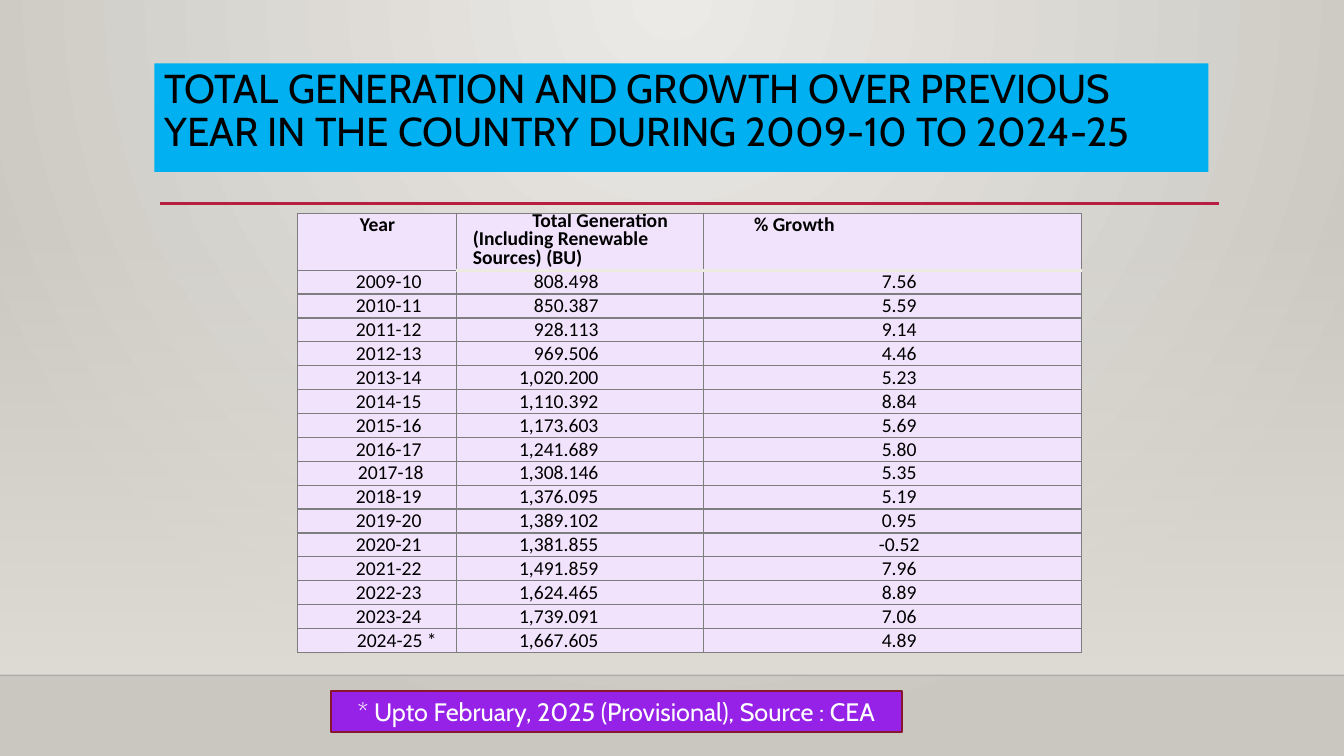
from lxml import etree
from pptx import Presentation
from pptx.dml.color import RGBColor
from pptx.enum import shapes, text
from pptx.oxml import ns
from pptx.util import Pt

TITLE = ("TOTAL GENERATION AND GROWTH OVER PREVIOUS YEAR "
         "IN THE COUNTRY DURING 2009-10 TO 2024-25")
NOTE = "* Upto February, 2025 (Provisional), Source : CEA"
HEADER = ("Year", "Total Generation (Including Renewable Sources) (BU)", "% Growth")
ROWS = [
    ("2009-10", "808.498", "7.56"),
    ("2010-11", "850.387", "5.59"),
    ("2011-12", "928.113", "9.14"),
    ("2012-13", "969.506", "4.46"),
    ("2013-14", "1,020.200", "5.23"),
    ("2014-15", "1,110.392", "8.84"),
    ("2015-16", "1,173.603", "5.69"),
    ("2016-17", "1,241.689", "5.80"),
    ("2017-18", "1,308.146", "5.35"),
    ("2018-19", "1,376.095", "5.19"),
    ("2019-20", "1,389.102", "0.95"),
    ("2020-21", "1,381.855", "-0.52"),
    ("2021-22", "1,491.859", "7.96"),
    ("2022-23", "1,624.465", "8.89"),
    ("2023-24", "1,739.091", "7.06"),
    ("2024-25 *", "1,667.605", "4.89"),
]

BLACK = RGBColor(0x00, 0x00, 0x00)
WHITE = RGBColor(0xFF, 0xFF, 0xFF)
SKY = RGBColor(0x00, 0xB0, 0xF0)
CRIMSON = RGBColor(0xB7, 0x1E, 0x42)
MAROON = RGBColor(0x87, 0x16, 0x31)
PURPLE = RGBColor(0x96, 0x22, 0xE7)
LILAC = RGBColor(0xF2, 0xE3, 0xFC)
GREY = RGBColor(0x7E, 0x7E, 0x7E)
CREAM = RGBColor(0xED, 0xEB, 0xE0)
PALE = RGBColor(0xEC, 0xEA, 0xE7)
STONE = RGBColor(0xCA, 0xC7, 0xC1)
SAND = RGBColor(0xDF, 0xDB, 0xD5)

WIDTH, HEIGHT = 960, 540
FLOOR = 482.4
TABLE_LEFT, TABLE_TOP = 212.4, 152.4
COLUMN_WIDTHS = (113.8, 176.4, 270)
HEADER_HEIGHT, ROW_HEIGHT = 40.6, 17.05

LEFT, CENTER, RIGHT = (text.PP_ALIGN.LEFT, text.PP_ALIGN.CENTER, text.PP_ALIGN.RIGHT)
# alignment, then left margin, right margin and first-line indent
HEADER_LAYOUT = ((CENTER, 0.7, 0, 0), (LEFT, 11.5, 0, 42.5), (LEFT, 36, 0, 0))
BODY_LAYOUT = ((LEFT, 41.8, 0, 0), (RIGHT, 0, 75, 0), (CENTER, 9.4, 0, 0))
WIDER_YEAR_INDENT = {"2017-18": 43.2, "2024-25 *": 42.5}


def set_values(target, values):
    for name, value in values.items():
        setattr(target, name, value)


def add_alpha(fill_parent, percent):
    """Make the first colour found inside the element see-through."""
    color = next(fill_parent.iter(ns.qn("a:srgbClr")))
    etree.SubElement(color, ns.qn("a:alpha"), val=str(percent * 1000))


def set_gradient(fill, first, last):
    fill.gradient()
    for stop, color, position in zip(fill.gradient_stops, (first, last), (0, 1)):
        stop.color.rgb = color
        stop.position = position


def add_background(slide):
    set_gradient(slide.background.fill, PALE, STONE)
    gradient = next(slide.element.iter(ns.qn("a:gradFill")))
    gradient.remove(gradient.find(ns.qn("a:lin")))
    circle = etree.SubElement(gradient, ns.qn("a:path"), path="circle")
    etree.SubElement(circle, ns.qn("a:fillToRect"),
                     l="43000", t="0", r="43000", b="100000")


def add_box(slide, left, top, width, height):
    shape = slide.shapes.add_shape(shapes.MSO_SHAPE.RECTANGLE,
                                   Pt(left), Pt(top), Pt(width), Pt(height))
    shape.shadow.inherit = False
    shape.line.fill.background()
    return shape


def add_rule(slide, left, right, y, color, weight):
    line = slide.shapes.add_connector(shapes.MSO_CONNECTOR.STRAIGHT,
                                      Pt(left), Pt(y), Pt(right), Pt(y))
    line.line.color.rgb = color
    line.line.width = Pt(weight)
    etree.SubElement(line.element.spPr, ns.qn("a:effectLst"))
    return line


def write(frame, words, font_name, size, color, alignment, bold=False):
    frame.word_wrap = True
    paragraph = frame.paragraphs[0]
    paragraph.alignment = alignment
    run = paragraph.add_run()
    run.text = words
    set_values(run.font, {"name": font_name, "size": Pt(size), "bold": bold})
    run.font.color.rgb = color
    return paragraph


def set_borders(cell, cream_sides):
    properties = cell._tc.get_or_add_tcPr()
    for position, side in enumerate("LRTB"):
        color, weight = (CREAM, 2.25) if side in cream_sides else (GREY, 1)
        border = etree.Element(ns.qn(f"a:ln{side}"), w=str(Pt(weight)))
        fill = etree.SubElement(border, ns.qn("a:solidFill"))
        etree.SubElement(fill, ns.qn("a:srgbClr"), val=str(color))
        properties.insert(position, border)


def fill_cell(cell, words, layout, is_header, cream_sides):
    alignment, left, right, indent = layout
    set_values(cell, dict.fromkeys(
        ("margin_left", "margin_right", "margin_top", "margin_bottom"), 0))
    cell.fill.solid()
    cell.fill.fore_color.rgb = LILAC
    set_borders(cell, cream_sides)
    paragraph = write(cell.text_frame, words, "Calibri", 14, BLACK, alignment, is_header)
    properties = paragraph._p.get_or_add_pPr()
    for name, value in {"marL": left, "marR": right, "indent": indent}.items():
        properties.set(name, str(Pt(value)))
    return paragraph


def add_generation_table(slide):
    table = slide.shapes.add_table(
        len(ROWS) + 1, len(HEADER), Pt(TABLE_LEFT), Pt(TABLE_TOP),
        Pt(sum(COLUMN_WIDTHS)), Pt(HEADER_HEIGHT + ROW_HEIGHT * len(ROWS))).table
    table.horz_banding = False
    for column, width in zip(table.columns, COLUMN_WIDTHS):
        column.width = Pt(width)
    for r, values in enumerate([HEADER] + ROWS):
        is_header = r == 0
        table.rows[r].height = Pt(HEADER_HEIGHT if is_header else ROW_HEIGHT)
        for c, words in enumerate(values):
            layout = (HEADER_LAYOUT if is_header else BODY_LAYOUT)[c]
            if words in WIDER_YEAR_INDENT:
                layout = (LEFT, WIDER_YEAR_INDENT[words], 0, 0)
            cream_sides = {0: "B", 1: "T"}.get(r, "") if c else ""
            paragraph = fill_cell(table.cell(r, c), words, layout, is_header, cream_sides)
            if is_header and c == 1:
                paragraph.line_spacing = Pt(13.5)


def main():
    presentation = Presentation()
    set_values(presentation, {"slide_width": Pt(WIDTH), "slide_height": Pt(HEIGHT)})
    slide = presentation.slides.add_slide(presentation.slide_layouts[6])
    add_background(slide)

    wall = add_box(slide, 0, 159.1, WIDTH, FLOOR - 159.1)
    set_gradient(wall.fill, SAND, SAND)
    wall.fill.gradient_angle = 270
    add_alpha(wall.element.spPr, 0)
    floor_line = add_rule(slide, 0, WIDTH, FLOOR, BLACK, 1)
    add_alpha(floor_line.element.spPr, 20)
    add_rule(slide, 114.5, 871, 145.3, CRIMSON, 2.5)

    title = add_box(slide, 110.2, 45.2, 753, 77.6)
    title.fill.solid()
    title.fill.fore_color.rgb = SKY
    title.text_frame.vertical_anchor = text.MSO_ANCHOR.TOP
    write(title.text_frame, TITLE, "Cabin", 28.8, BLACK, LEFT).line_spacing = 0.9

    add_generation_table(slide)

    note = add_box(slide, 236.6, 493.4, 407.5, 29.6)
    note.fill.solid()
    note.fill.fore_color.rgb = PURPLE
    note.line.color.rgb = MAROON
    note.line.width = Pt(1.25)
    note.text_frame.vertical_anchor = text.MSO_ANCHOR.MIDDLE
    write(note.text_frame, NOTE, "Cabin", 18, WHITE, CENTER)

    presentation.save("out.pptx")


if __name__ == "__main__":
    main()
